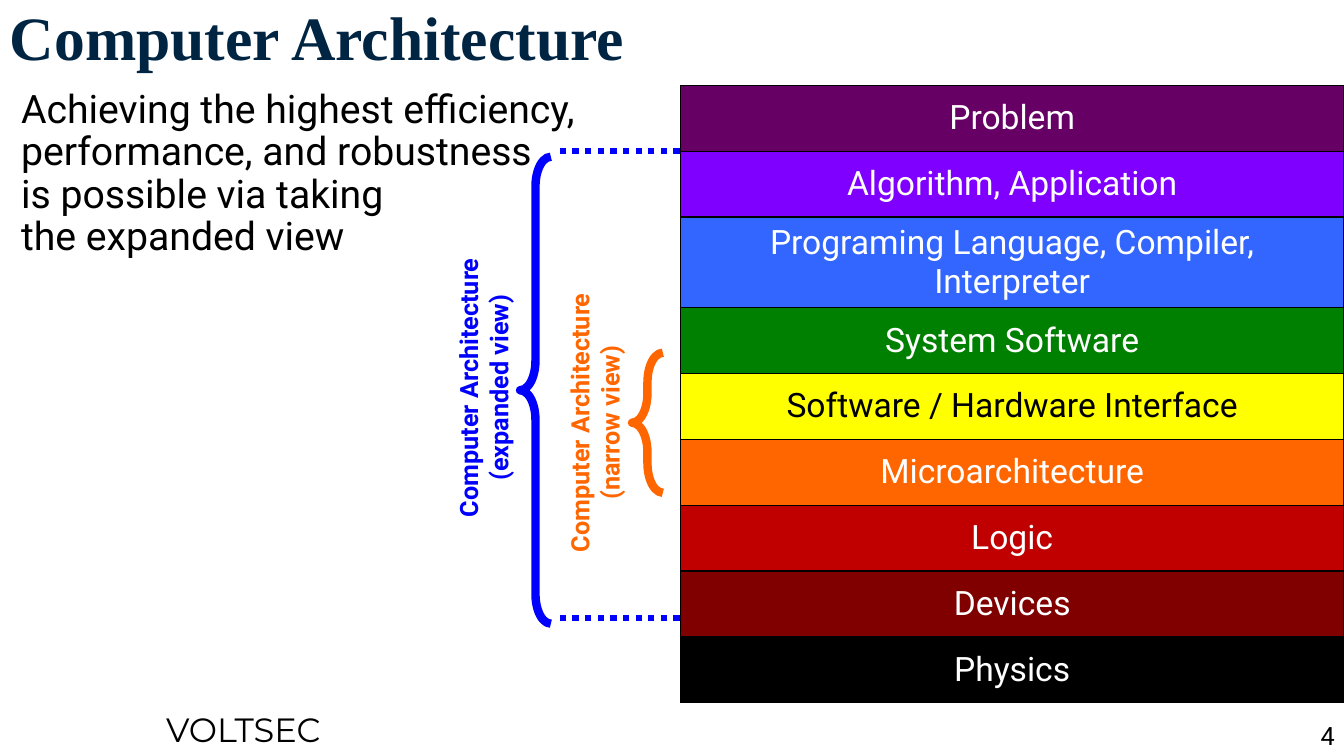
import pptx
import pptx.util
import pptx.dml.color
import pptx.enum.dml
import pptx.enum.shapes
import pptx.enum.text
import pptx.oxml
import pptx.oxml.ns
import lxml.etree

Pt = pptx.util.Pt
RGB = pptx.dml.color.RGBColor.from_string
ALIGN = pptx.enum.text.PP_ALIGN
ANCHOR = pptx.enum.text.MSO_ANCHOR
SHAPE = pptx.enum.shapes.MSO_SHAPE
LINE = pptx.enum.shapes.MSO_CONNECTOR.STRAIGHT
A = pptx.oxml.ns.nsdecls("a")

HUES = {
    "black": "000000", "white": "FFFFFF", "navy": "002543",
    "blue": "0000FF", "orange": "FF6600", "plum": "660065",
    "violet": "8000FF", "azure": "3366FF", "green": "008001",
    "yellow": "FFFF00", "red": "C00000", "maroon": "800000",
}


def style(run, size, hue, font="Roboto", bold=False):
    run.font.size = Pt(size)
    run.font.name = font
    run.font.bold = bold
    run.font.color.rgb = RGB(HUES[hue])


def write(spot, paras, size, hue, font="Roboto", bold=False,
          align=ALIGN.LEFT, wrap=True, space=1.0):
    box = slide.shapes.add_textbox(*[Pt(v) for v in spot])
    frame = box.text_frame
    frame.word_wrap = wrap
    for i, lines in enumerate(paras):
        para = frame.add_paragraph() if i else frame.paragraphs[0]
        para.alignment = align
        para.line_spacing = space
        for j, line in enumerate(lines.split("\n")):
            if j:
                para.add_line_break()
            run = para.add_run()
            run.text = line
            style(run, size, hue, font, bold)
    return box


deck = pptx.Presentation()
deck.slide_width = Pt(960)
deck.slide_height = Pt(540)
slide = deck.slides.add_slide(deck.slide_layouts[6])

title = write((0, 0, 960, 57.6), ["Computer Architecture"], 44, "navy",
              font="Times New Roman", bold=True, space=0.9)
title.text_frame.vertical_anchor = ANCHOR.MIDDLE
write((8, 60.5, 466, 424),
      ["Achieving the highest efficiency, performance, and robustness\n"
       "is possible via taking\nthe expanded view"],
      28, "black", space=0.9)
write((906.5, 511, 54, 29), ["4"], 18, "black", align=ALIGN.RIGHT)
write((111.6, 502.6, 137.5, 36), ["VOLTSEC"], 24, "black",
      font="Montserrat", wrap=False)

layers = [
    ("Problem", "plum", "white"),
    ("Algorithm, Application", "violet", "white"),
    ("Programing Language, Compiler, Interpreter", "azure", "white"),
    ("System Software", "green", "white"),
    ("Software / Hardware Interface", "yellow", "black"),
    ("Microarchitecture", "orange", "white"),
    ("Logic", "red", "white"),
    ("Devices", "maroon", "white"),
    ("Physics", "black", "white"),
]
stack = slide.shapes.add_table(
    len(layers), 1, Pt(486), Pt(61), Pt(474), Pt(47 * len(layers))).table
stack.first_row = False
stack.horz_banding = False
for row, (name, fill, ink) in enumerate(layers):
    stack.rows[row].height = Pt(47)
    cell = stack.cell(row, 0)
    cell.vertical_anchor = ANCHOR.MIDDLE
    props = cell._tc.get_or_add_tcPr()
    for side in "LRTB":
        props.append(pptx.oxml.parse_xml(
            f'<a:ln{side} {A} w="12700"><a:solidFill>'
            f'<a:srgbClr val="{HUES["black"]}"/></a:solidFill></a:ln{side}>'))
    cell.fill.solid()
    cell.fill.fore_color.rgb = RGB(HUES[fill])
    para = cell.text_frame.paragraphs[0]
    para.alignment = ALIGN.CENTER
    run = para.add_run()
    run.text = name
    style(run, 24, ink)

views = [
    ("(narrow view)", "orange", (313, 276.5, 224, 51), (451.5, 252, 22, 100)),
    ("(expanded view)", "blue", (176.5, 251.5, 338, 51), (371.5, 112, 22, 333.5)),
]
for view, hue, spot, span in views:
    label = write(spot, ["Computer Architecture", view], 18, hue,
                  bold=True, align=ALIGN.CENTER)
    label.rotation = 270
    brace = slide.shapes.add_shape(SHAPE.LEFT_BRACE, *[Pt(v) for v in span])
    brace.shadow.inherit = False
    brace.adjustments[0] = 0.96
    brace.adjustments[1] = 0.5
    brace.fill.background()
    brace.line.color.rgb = RGB(HUES[hue])
    brace.line.width = Pt(6)

for y in (108, 441.5):
    dots = slide.shapes.add_connector(LINE, Pt(485.5), Pt(y), Pt(396.5), Pt(y))
    dots.line.color.rgb = RGB(HUES["blue"])
    dots.line.width = Pt(4.5)
    dots.line.dash_style = pptx.enum.dml.MSO_LINE.ROUND_DOT
    lxml.etree.SubElement(dots._element.spPr, pptx.oxml.ns.qn("a:effectLst"))

deck.save("out.pptx")
